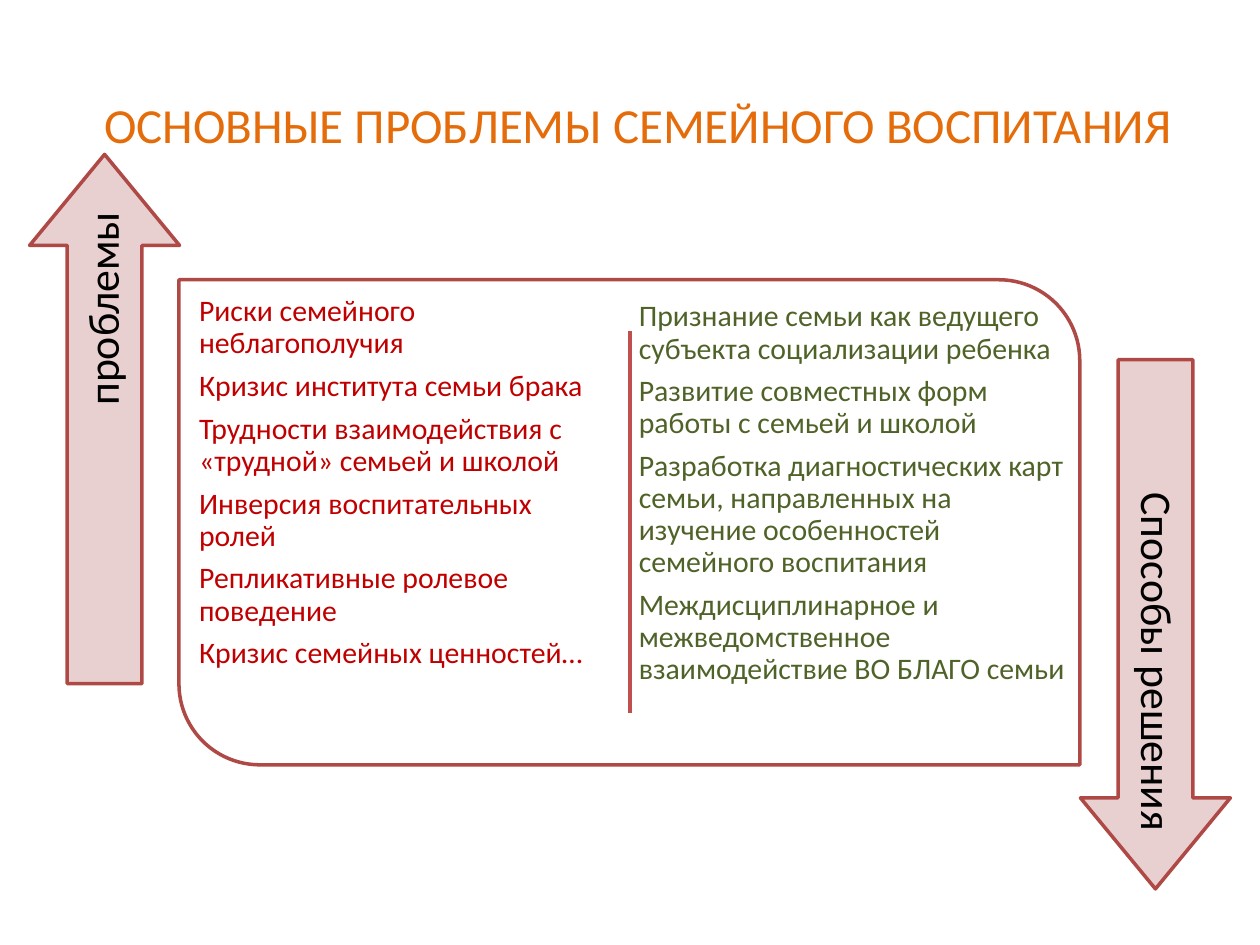
from lxml.etree import SubElement
from pptx import Presentation
from pptx.dml.color import RGBColor
from pptx.enum.shapes import MSO_CONNECTOR, MSO_SHAPE
from pptx.enum.text import MSO_ANCHOR, PP_ALIGN
from pptx.oxml.ns import qn
from pptx.util import Inches, Pt

ORANGE = RGBColor(0xE4, 0x6C, 0x0A)
WHITE = RGBColor(0xFF, 0xFF, 0xFF)
PINK = RGBColor(0xE8, 0xD0, 0xD0)
EDGE = RGBColor(0xAE, 0x49, 0x46)
BRICK = RGBColor(0xC0, 0x50, 0x4D)
RED = RGBColor(0xC0, 0x00, 0x00)
GREEN = RGBColor(0x4F, 0x62, 0x28)
BLACK = RGBColor(0, 0, 0)

RISKS = [
    "Риски семейного неблагополучия",
    "Кризис института семьи брака",
    "Трудности взаимодействия с «трудной» семьей и школой",
    "Инверсия воспитательных ролей",
    "Репликативные ролевое поведение",
    "Кризис семейных ценностей…",
]
WAYS = [
    "Признание семьи как ведущего субъекта социализации ребенка",
    "Развитие совместных форм работы с семьей и школой",
    "Разработка диагностических карт семьи, направленных на изучение "
    "особенностей семейного воспитания",
    "Междисциплинарное и межведомственное взаимодействие ВО БЛАГО семьи",
]


class Deck:
    font = "Calibri"
    width = Pt(2)

    def __init__(self, slide):
        self.slide = slide

    def shape(self, kind, box, fill, adjust, turn=0):
        item = self.slide.shapes.add_shape(kind, *map(Inches, box))
        item.shadow.inherit = False
        item.rotation = turn
        for i, value in enumerate(adjust):
            item.adjustments[i] = value
        item.fill.solid()
        item.fill.fore_color.rgb = fill
        item.line.color.rgb = EDGE
        item.line.width = self.width

    def line(self, start, end):
        item = self.slide.shapes.add_connector(
            MSO_CONNECTOR.STRAIGHT, *map(Inches, start + end))
        item.line.color.rgb = BRICK
        item.line.width = self.width
        SubElement(item._element.spPr, qn("a:effectLst"))

    def text(self, box, lines, size, color, align=PP_ALIGN.LEFT,
             anchor=MSO_ANCHOR.TOP, inset=0.1, space=0.9, after=0, turn=0):
        item = self.slide.shapes.add_textbox(*map(Inches, box))
        item.rotation = turn
        frame = item.text_frame
        frame.word_wrap = True
        frame.vertical_anchor = anchor
        frame.margin_left = frame.margin_right = Inches(inset)
        frame.margin_top = frame.margin_bottom = Inches(inset)
        for i, line in enumerate(lines):
            para = frame.add_paragraph() if i else frame.paragraphs[0]
            para.alignment = align
            para.line_spacing = space
            para.space_after = Pt(after)
            run = para.add_run()
            run.text = line
            run.font.name = self.font
            run.font.size = Pt(size)
            run.font.color.rgb = color

    def arrow(self, left, top, label, label_left, label_top, turn):
        self.shape(MSO_SHAPE.RIGHT_ARROW, (left, top, 4.2, 1.19), PINK,
                   (0.498, 0.607), turn)
        self.text((label_left, label_top, 3.84, 0.59), [label], 25, BLACK,
                  PP_ALIGN.RIGHT, MSO_ANCHOR.MIDDLE, turn=turn)


def main():
    show = Presentation()
    show.slide_width, show.slide_height = Inches(10), Inches(7.5)
    deck = Deck(show.slides.add_slide(show.slide_layouts[6]))

    # Title
    deck.text((0.56, 0.59, 9, 0.79), ["ОСНОВНЫЕ ПРОБЛЕМЫ СЕМЕЙНОГО ВОСПИТАНИЯ"],
              28, ORANGE, PP_ALIGN.CENTER, MSO_ANCHOR.MIDDLE, space=1)

    # Panel with its divider
    deck.shape(MSO_SHAPE.ROUND_2_DIAG_RECTANGLE, (1.42, 2.22, 7.15, 3.85),
               WHITE, (0, 0.167))
    deck.line((5, 2.63), (5, 5.66))

    # Two columns
    deck.text((1.51, 2.28, 3.4, 3.72), RISKS, 17, RED, inset=0.07, after=6)
    deck.text((5, 2.32, 3.58, 3.65), WAYS, 17, GREEN, inset=0.07, after=6)

    # Side arrows
    deck.arrow(-1.27, 2.73, "проблемы", -1.09, 3.21, 270)
    deck.arrow(7.07, 4.36, "Способы решения", 7.25, 4.48, 90)

    show.save("out.pptx")


if __name__ == "__main__":
    main()
